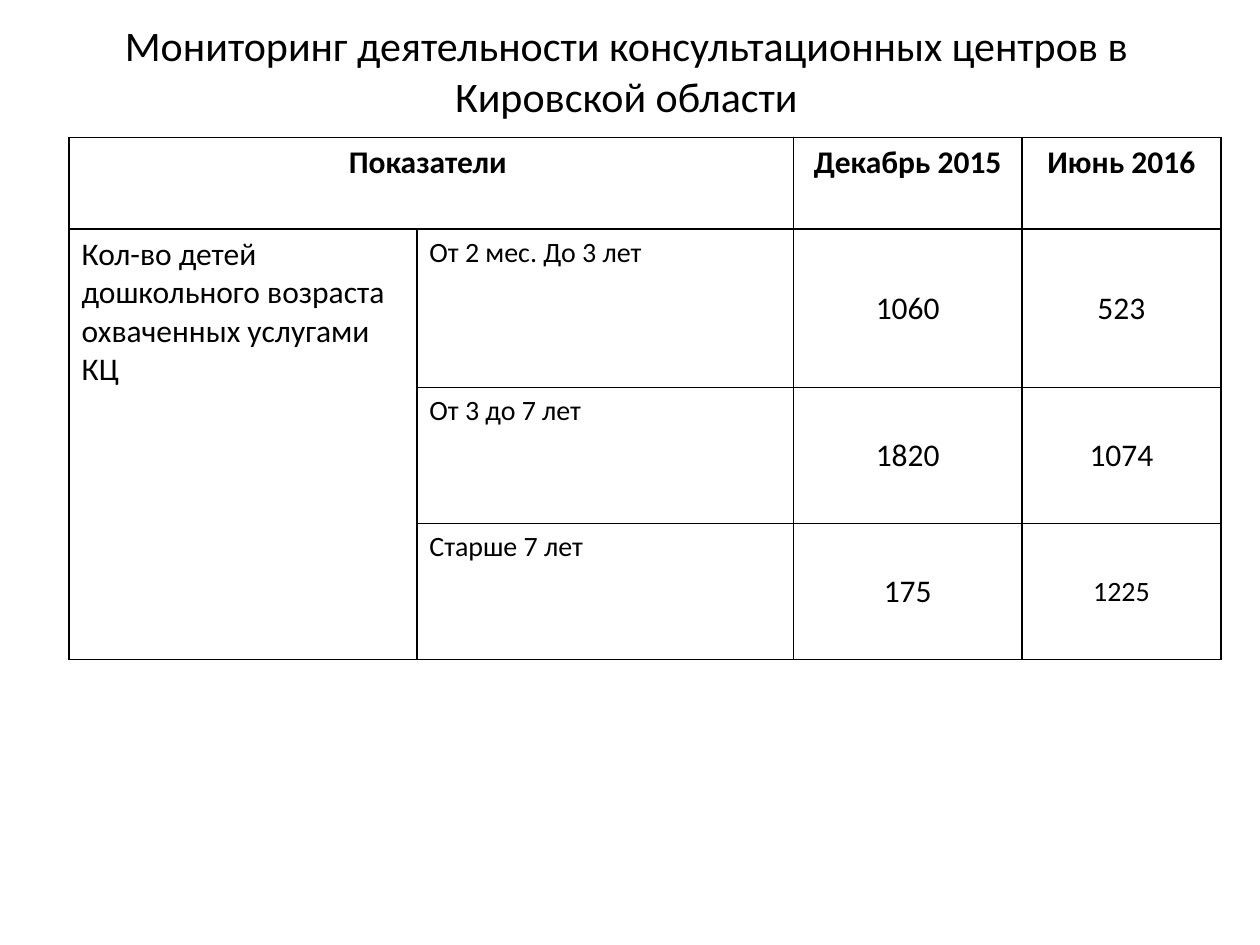
import pptx
import pptx.dml.color
import pptx.enum.text
import pptx.oxml
import pptx.oxml.ns
import pptx.util

Pt = pptx.util.Pt
ALIGN = pptx.enum.text.PP_ALIGN
ANCHOR = pptx.enum.text.MSO_ANCHOR
COLORS = {"ink": "000000", "paper": "FFFFFF"}
FONT = "Calibri"
COLUMN_WIDTHS = [198.75, 215.25, 130.5, 113.75]
ROW_HEIGHTS = [52.5, 90.5, 77.75, 77.75]
PERIODS = ["Декабрь 2015", "Июнь 2016"]
AGE_GROUPS = [
    ("От 2 мес. До 3 лет", [("1060", 18), ("523", 18)]),
    ("От 3 до 7 лет", [("1820", 18), ("1074", 18)]),
    ("Старше 7 лет", [("175", 18), ("1225", 16)]),
]


def rgb(name):
    """Return the named colour."""
    return pptx.dml.color.RGBColor.from_string(COLORS[name])


def write(frame, text, size, align=ALIGN.LEFT, bold=False):
    """Write one run of text into a text frame."""
    paragraph = frame.paragraphs[0]
    paragraph.alignment = align
    run = paragraph.add_run()
    run.text = text
    run.font.name = FONT
    run.font.size = Pt(size)
    run.font.bold = bold
    run.font.color.rgb = rgb("ink")


def style_cell(cell):
    """Give a cell thin borders on all sides and a plain fill."""
    properties = cell._tc.get_or_add_tcPr()
    for side in ("lnL", "lnR", "lnT", "lnB"):
        properties.append(pptx.oxml.parse_xml(
            f'<a:{side} {pptx.oxml.ns.nsdecls("a")} w="{Pt(1)}"><a:solidFill>'
            f'<a:srgbClr val="{COLORS["ink"]}"/></a:solidFill></a:{side}>'))
    cell.fill.solid()
    cell.fill.fore_color.rgb = rgb("paper")


def add_title(slide, left, top, width, height):
    """Place the centred slide title."""
    title = slide.shapes.add_textbox(Pt(left), Pt(top), Pt(width), Pt(height))
    frame = title.text_frame
    frame.word_wrap = True
    frame.vertical_anchor = ANCHOR.MIDDLE
    write(frame, "Мониторинг деятельности консультационных центров в Кировской области",
          24, ALIGN.CENTER)


def add_indicators(slide, left, top):
    """Place the table of children served by age group and period."""
    table = slide.shapes.add_table(
        len(ROW_HEIGHTS), len(COLUMN_WIDTHS), Pt(left), Pt(top),
        Pt(sum(COLUMN_WIDTHS)), Pt(sum(ROW_HEIGHTS))).table
    for column, width in zip(table.columns, COLUMN_WIDTHS):
        column.width = Pt(width)
    for row, height in zip(table.rows, ROW_HEIGHTS):
        row.height = Pt(height)
    for cell in table.iter_cells():
        style_cell(cell)
    table.cell(0, 0).merge(table.cell(0, 1))
    table.cell(1, 0).merge(table.cell(3, 0))

    write(table.cell(0, 0).text_frame, "Показатели ", 18, ALIGN.CENTER, True)
    for column, period in enumerate(PERIODS, 2):
        write(table.cell(0, column).text_frame, period, 18, ALIGN.CENTER, True)
    write(table.cell(1, 0).text_frame,
          "Кол-во детей дошкольного возраста охваченных услугами КЦ", 18)
    for row, (age_group, counts) in enumerate(AGE_GROUPS, 1):
        write(table.cell(row, 1).text_frame, age_group, 16)
        for column, (count, size) in enumerate(counts, 2):
            cell = table.cell(row, column)
            cell.vertical_anchor = ANCHOR.MIDDLE
            write(cell.text_frame, count, size, ALIGN.CENTER)


def main():
    """Build and save the monitoring slide."""
    presentation = pptx.Presentation()
    presentation.slide_width = Pt(720)
    presentation.slide_height = Pt(540)
    slide = presentation.slides.add_slide(presentation.slide_layouts[6])
    slide.background.fill.solid()
    slide.background.fill.fore_color.rgb = rgb("paper")
    add_title(slide, 34, 11.5, 648, 57)
    add_indicators(slide, 39.5, 78.5)
    presentation.save("out.pptx")


if __name__ == "__main__":
    main()
